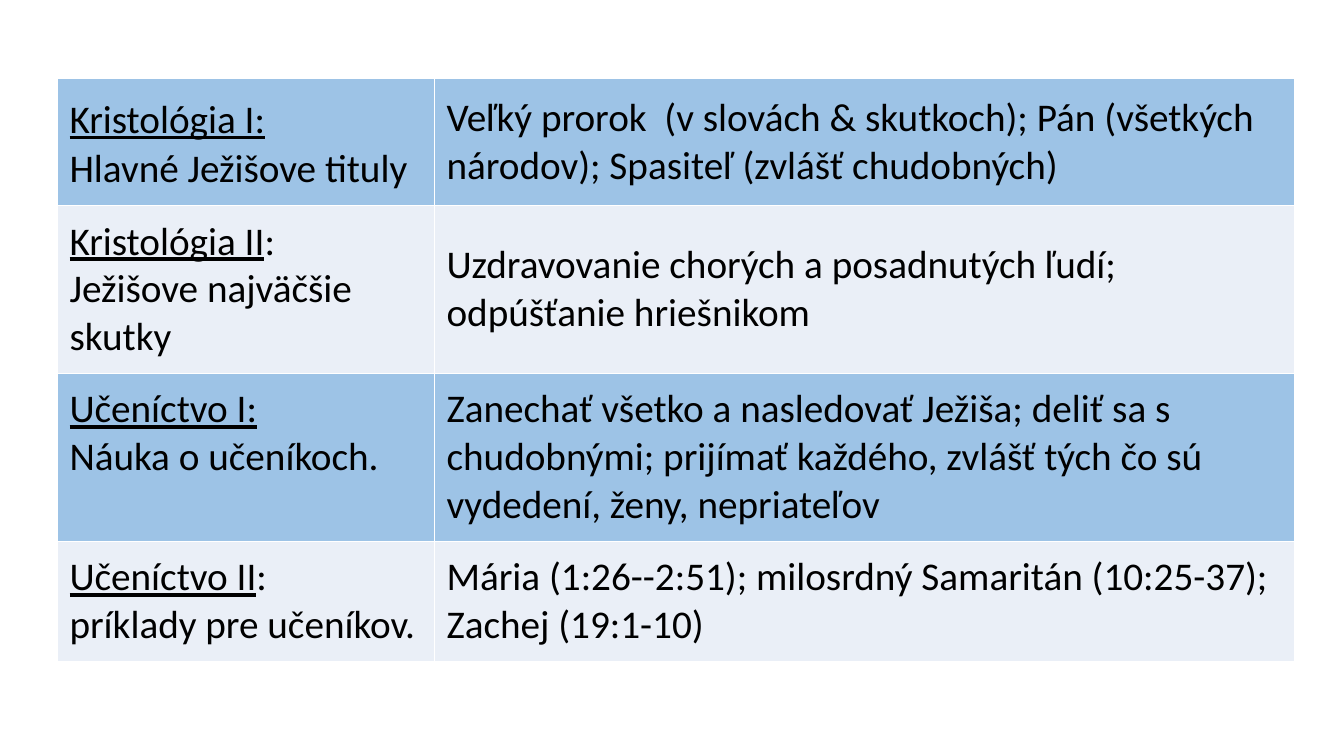
"""Build a slide with a table of Christology and discipleship themes."""
from lxml import etree
from pptx import Presentation
from pptx.dml.color import RGBColor
from pptx.enum.text import MSO_ANCHOR
from pptx.oxml.ns import qn
from pptx.util import Inches, Pt

MIDDLE, TOP = MSO_ANCHOR.MIDDLE, MSO_ANCHOR.TOP
BAND_FILLS = ["9DC3E6", "EAEFF7"]
COLUMN_WIDTHS = [3.74, 8.53]
ROW_HEIGHTS = [1.26, 1.66, 1.66, 1.17]
TEXT_SIZE, WIDE_GAP_SIZE = 28, 32
THEMES = [
    ("Kristológia I:", " ", "Hlavné Ježišove tituly",
     "Veľký prorok  (v slovách & skutkoch); Pán (všetkých národov); "
     "Spasiteľ (zvlášť chudobných)", MIDDLE),
    ("Kristológia II", ":", "Ježišove najväčšie skutky",
     "Uzdravovanie chorých a posadnutých ľudí; odpúšťanie hriešnikom", MIDDLE),
    ("Učeníctvo I:", "", "Náuka o učeníkoch.",
     "Zanechať všetko a nasledovať Ježiša; deliť sa s chudobnými; "
     "prijímať každého, zvlášť tých čo sú vydedení, ženy, nepriateľov", TOP),
    ("Učeníctvo II", ":", "príklady pre učeníkov.",
     "Mária (1:26--2:51); milosrdný Samaritán (10:25-37); Zachej (19:1-10)", MIDDLE),
]


def color(hex_code):
    return RGBColor.from_string(hex_code)


def style_cell(cell, fill, anchor):
    cell.margin_left = cell.margin_right = Inches(0.12)
    cell.margin_top = cell.margin_bottom = Inches(0.12)
    cell.vertical_anchor = anchor
    properties = cell._tc.get_or_add_tcPr()
    for side in ("lnL", "lnR", "lnT", "lnB"):
        border = etree.SubElement(properties, qn(f"a:{side}"), w=str(Pt(1)))
        border_fill = etree.SubElement(border, qn("a:solidFill"))
        etree.SubElement(border_fill, qn("a:srgbClr"), val="FFFFFF")
    cell.fill.solid()
    cell.fill.fore_color.rgb = color(fill)
    for run in cell.text_frame.paragraphs[0].runs:
        run.font.name = "Calibri"
        run.font.size = Pt(TEXT_SIZE)
        run.font.color.rgb = color("000000")


presentation = Presentation()
presentation.slide_width = Inches(13.33)
presentation.slide_height = Inches(7.5)
slide = presentation.slides.add_slide(presentation.slide_layouts[6])

themes_table = slide.shapes.add_table(
    len(THEMES), len(COLUMN_WIDTHS), Inches(0.57), Inches(0.78),
    Inches(sum(COLUMN_WIDTHS)), Inches(sum(ROW_HEIGHTS))).table
for column, width in zip(themes_table.columns, COLUMN_WIDTHS):
    column.width = Inches(width)

for index, (heading, ending, topic, summary, anchor) in enumerate(THEMES):
    themes_table.rows[index].height = Inches(ROW_HEIGHTS[index])
    fill = BAND_FILLS[index % 2]
    topic_cell, summary_cell = themes_table.cell(index, 0), themes_table.cell(index, 1)

    topic_line = topic_cell.text_frame.paragraphs[0]
    topic_line.text = heading
    topic_line.runs[0].font.underline = True
    if ending:
        topic_line.add_run().text = ending
    topic_line.add_line_break()
    topic_line.add_run().text = topic
    style_cell(topic_cell, fill, anchor)
    if ending == " ":
        topic_line.runs[1].font.size = Pt(WIDE_GAP_SIZE)

    summary_cell.text_frame.text = summary
    style_cell(summary_cell, fill, MIDDLE)

presentation.save("out.pptx")
